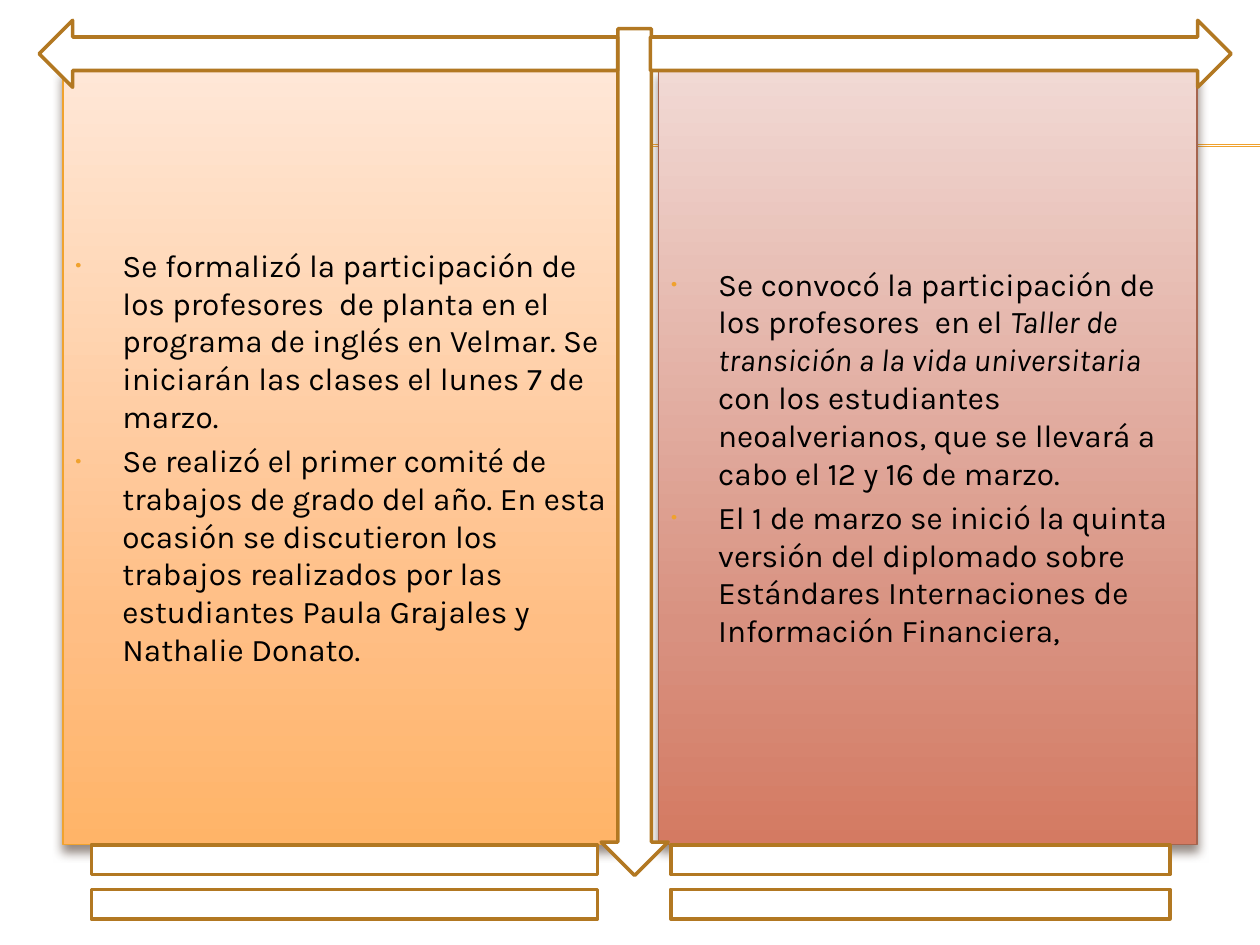
from copy import deepcopy

from lxml.etree import SubElement
from pptx import Presentation
from pptx.dml.color import RGBColor
from pptx.enum.shapes import MSO_CONNECTOR, MSO_SHAPE
from pptx.enum.text import MSO_ANCHOR, PP_ALIGN
from pptx.oxml.ns import qn
from pptx.util import Cm, Pt

WHITE = RGBColor(0xFF, 0xFF, 0xFF)
BLACK = RGBColor(0x00, 0x00, 0x00)
AMBER = RGBColor(0xF0, 0xA2, 0x2E)
BRONZE = RGBColor(0xB2, 0x78, 0x22)
BRICK = RGBColor(0xA5, 0x64, 0x4E)
SHADE = RGBColor(0x4E, 0x3B, 0x30)
PEACH = [(0, RGBColor(0xFF, 0xE7, 0xD7)), (0.72, RGBColor(0xFF, 0xBE, 0x84)),
         (1, RGBColor(0xFF, 0xB4, 0x68))]
ROSE = [(0, RGBColor(0xF1, 0xD9, 0xD4)), (0.72, RGBColor(0xD8, 0x91, 0x80)),
        (1, RGBColor(0xD4, 0x7A, 0x62))]

# Each paragraph is a list of (text, italic) runs
NEWS_LEFT = [
    [("Se formalizó la participación de los profesores  de planta en el programa "
      "de inglés en Velmar. Se iniciarán las clases el lunes 7 de marzo.", False)],
    [("Se realizó el primer comité de trabajos de grado del año. En esta ocasión "
      "se discutieron los trabajos realizados por las estudiantes Paula Grajales "
      "y Nathalie Donato.", False)],
]
NEWS_RIGHT = [
    [("Se convocó la participación de los profesores  en el ", False),
     ("Taller de transición a la vida universitaria ", True),
     ("con los estudiantes neoalverianos, que se llevará a cabo el 12 y 16 de "
      "marzo.", False)],
    [("El 1 de marzo se inició la quinta versión del diplomado sobre Estándares "
      "Internaciones de Información Financiera,", False)],
]


def set_all(target, values):
    for name, value in values.items():
        setattr(target, name, value)


class NewsSlide:
    font = {"name": "Karla", "size": Pt(18)}
    frame = {"word_wrap": True, "vertical_anchor": MSO_ANCHOR.MIDDLE}
    paragraph = {"alignment": PP_ALIGN.LEFT, "space_before": Pt(3.6)}
    hanging = Cm(0.95)

    def __init__(self, slide):
        self.slide = slide

    def rule(self, left, right, y):
        line = self.slide.shapes.add_connector(
            MSO_CONNECTOR.STRAIGHT, Cm(left), Cm(y), Cm(right), Cm(y))
        line.line.color.rgb = AMBER
        line.line.width = Pt(0.75)
        SubElement(line._element.spPr, qn("a:effectLst"))

    def outlined(self, kind, box, color=BRONZE, width=2):
        shape = self.slide.shapes.add_shape(kind, *map(Cm, box))
        shape.shadow.inherit = False
        shape.fill.solid()
        shape.fill.fore_color.rgb = WHITE
        shape.line.color.rgb = color
        shape.line.width = Pt(width)
        return shape

    def panel(self, box, stops, border, news):
        shape = self.outlined(MSO_SHAPE.RECTANGLE, box, border, 0.79)
        self.gradient(shape, stops)
        self.drop_shadow(shape)
        text = shape.text_frame
        set_all(text, self.frame)
        for index, runs in enumerate(news):
            item = text.add_paragraph() if index else text.paragraphs[0]
            set_all(item, self.paragraph)
            self.bullet(item)
            for words, italic in runs:
                run = item.add_run()
                run.text = words
                set_all(run.font, {**self.font, "italic": italic})
                run.font.color.rgb = BLACK

    def gradient(self, shape, stops):
        shape.fill.gradient()
        shape.fill.gradient_angle = 270
        stop_list = shape._element.spPr.find(qn("a:gradFill")).find(qn("a:gsLst"))
        stop_list.append(deepcopy(stop_list[-1]))
        for stop, (position, color) in zip(shape.fill.gradient_stops, stops):
            stop.position = position
            stop.color.rgb = color

    def drop_shadow(self, shape):
        effects = shape._element.spPr.find(qn("a:effectLst"))
        shadow = SubElement(effects, qn("a:outerShdw"), blurRad=str(Pt(6)),
                            dist=str(Pt(4)), dir="5400000", rotWithShape="0")
        color = SubElement(shadow, qn("a:srgbClr"), val=str(SHADE))
        SubElement(color, qn("a:alpha"), val="60000")

    def bullet(self, item):
        props = item._p.get_or_add_pPr()
        props.set("marL", str(self.hanging))
        props.set("indent", str(-self.hanging))
        SubElement(SubElement(props, qn("a:buClr")), qn("a:srgbClr"), val=str(AMBER))
        SubElement(props, qn("a:buSzPct"), val="70000")
        SubElement(props, qn("a:buFont"), typeface="Karla")
        SubElement(props, qn("a:buChar"), char="•")


def main():
    deck = Presentation()
    set_all(deck, {"slide_width": Cm(25.4), "slide_height": Cm(19.05)})
    page = NewsSlide(deck.slides.add_slide(deck.slide_layouts[6]))

    # Double rule behind the panels
    for y in (2.92, 2.95):
        page.rule(1.42, 25.4, y)

    # News panels
    page.panel((1.27, 1.4, 11.23, 15.62), PEACH, AMBER, NEWS_LEFT)
    page.panel((13.28, 1.4, 10.85, 15.62), ROSE, BRICK, NEWS_RIGHT)

    # Arrows framing the panels, then the double bars below them
    for kind, box in (
        (MSO_SHAPE.DOWN_ARROW, (12.12, 0.58, 1.35, 17.07)),
        (MSO_SHAPE.RIGHT_ARROW, (13.11, 0.41, 11.71, 1.35)),
        (MSO_SHAPE.LEFT_ARROW, (0.79, 0.41, 11.66, 1.35)),
        (MSO_SHAPE.MATH_EQUAL, (0, 16.51, 13.89, 2.54)),
        (MSO_SHAPE.MATH_EQUAL, (11.71, 16.51, 13.69, 2.54)),
    ):
        page.outlined(kind, box)

    deck.save("out.pptx")


if __name__ == "__main__":
    main()
